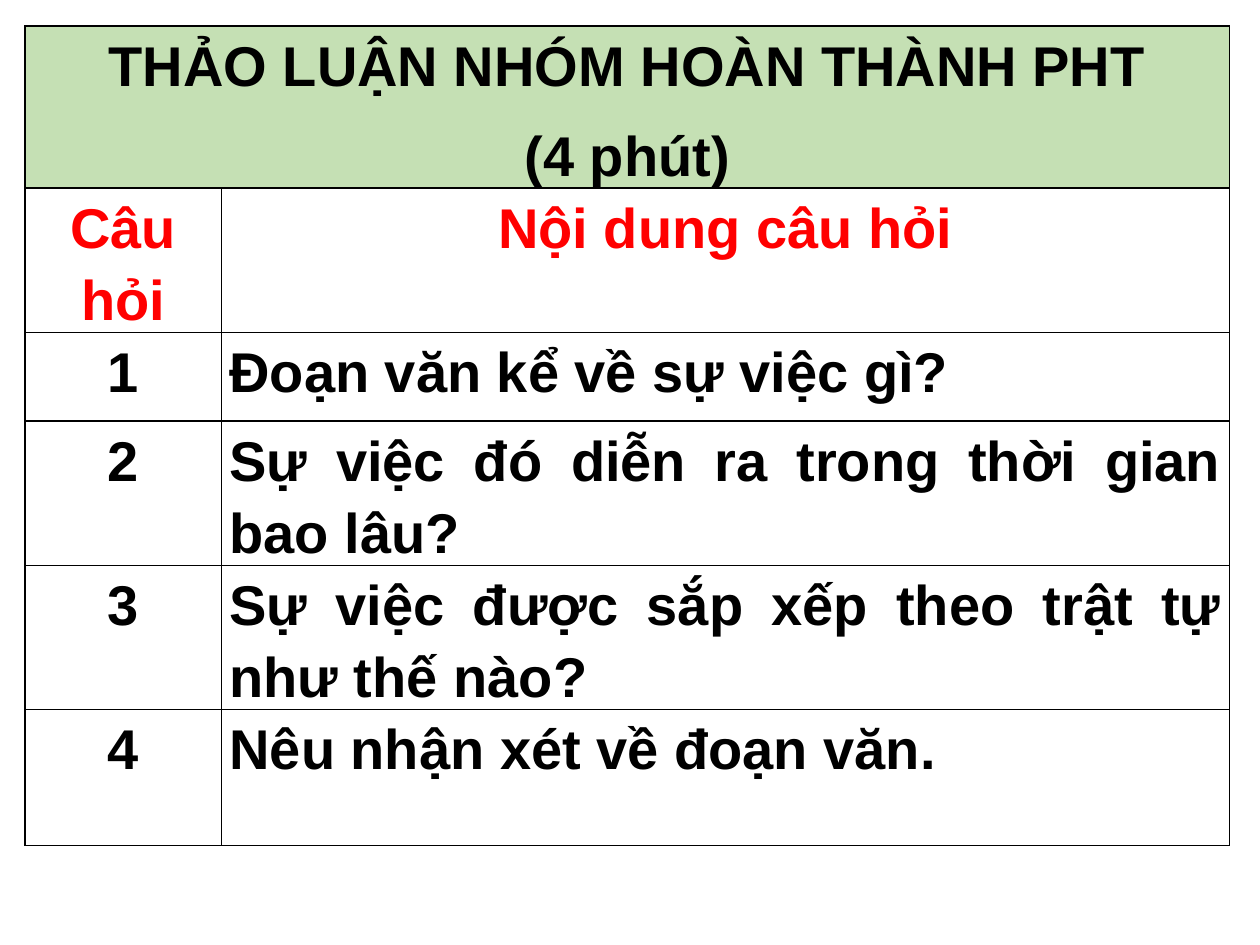
from dataclasses import dataclass

from lxml import etree
from pptx import Presentation
from pptx.dml.color import RGBColor
from pptx.enum.text import PP_ALIGN
from pptx.oxml.ns import qn
from pptx.util import Pt

CENTER, JUSTIFY = PP_ALIGN.CENTER, PP_ALIGN.JUSTIFY


@dataclass(frozen=True)
class Theme:
    font: str = "Arial"
    size: float = 32
    ink: str = "000000"
    accent: str = "FF0000"
    band: str = "C5E0B4"
    line: float = 1


class Sheet:
    def __init__(self, slide, theme):
        self.slide = slide
        self.theme = theme

    def table(self, left, top, height, cols, rows):
        frame = self.slide.shapes.add_table(
            len(rows), len(cols), Pt(left), Pt(top), Pt(sum(cols)), Pt(height))
        grid = frame.table
        grid.first_row = grid.horz_banding = False
        for col, width in zip(grid.columns, cols):
            col.width = Pt(width)
        for row, tall in zip(grid.rows, rows):
            row.height = Pt(tall)
        frame.height = Pt(height)
        for cell in grid.iter_cells():
            self.border(cell)
            cell.fill.background()
            cell.margin_left = cell.margin_right = Pt(4.5)
            cell.margin_top = cell.margin_bottom = 0
        return grid

    def border(self, cell):
        props = cell._tc.get_or_add_tcPr()
        for side in ("lnL", "lnR", "lnT", "lnB"):
            line = etree.SubElement(
                props, qn(f"a:{side}"), w=str(Pt(self.theme.line)))
            fill = etree.SubElement(line, qn("a:solidFill"))
            etree.SubElement(fill, qn("a:srgbClr"), val=self.theme.ink)

    def label(self, cell, lines, color, align=CENTER):
        frame = cell.text_frame
        for i, line in enumerate(lines):
            para = frame.add_paragraph() if i else frame.paragraphs[0]
            para.alignment = align
            para.line_spacing = 1.15
            para.space_after = Pt(10)
            run = para.add_run()
            run.text = line
            font = run.font
            font.name, font.size, font.bold = (
                self.theme.font, Pt(self.theme.size), True)
            font.color.rgb = RGBColor.from_string(color)


TITLE = ["THẢO LUẬN NHÓM HOÀN THÀNH PHT", "(4 phút)"]
HEADS = ["Câu hỏi", "Nội dung câu hỏi"]
ASKS = [
    "Đoạn văn kể về sự việc gì?",
    "Sự việc đó diễn ra trong thời gian bao lâu?",
    "Sự việc được sắp xếp theo trật tự như thế nào?",
    "Nêu nhận xét về đoạn văn.",
]


def main():
    deck = Presentation()
    deck.slide_width, deck.slide_height = Pt(720), Pt(540)
    theme = Theme()
    sheet = Sheet(deck.slides.add_slide(deck.slide_layouts[6]), theme)

    grid = sheet.table(14.2, 15, 491, cols=[112.5, 576],
                       rows=[57, 70.5, 50.5, 47.5, 50.5, 77.5])
    title = grid.cell(0, 0)
    title.merge(grid.cell(0, 1))
    title.fill.solid()
    title.fill.fore_color.rgb = RGBColor.from_string(theme.band)
    sheet.label(title, TITLE, theme.ink)

    for col, head in enumerate(HEADS):
        sheet.label(grid.cell(1, col), [head], theme.accent)
    for num, ask in enumerate(ASKS, 1):
        sheet.label(grid.cell(num + 1, 0), [str(num)], theme.ink)
        sheet.label(grid.cell(num + 1, 1), [ask], theme.ink, JUSTIFY)

    deck.save("out.pptx")


if __name__ == "__main__":
    main()
